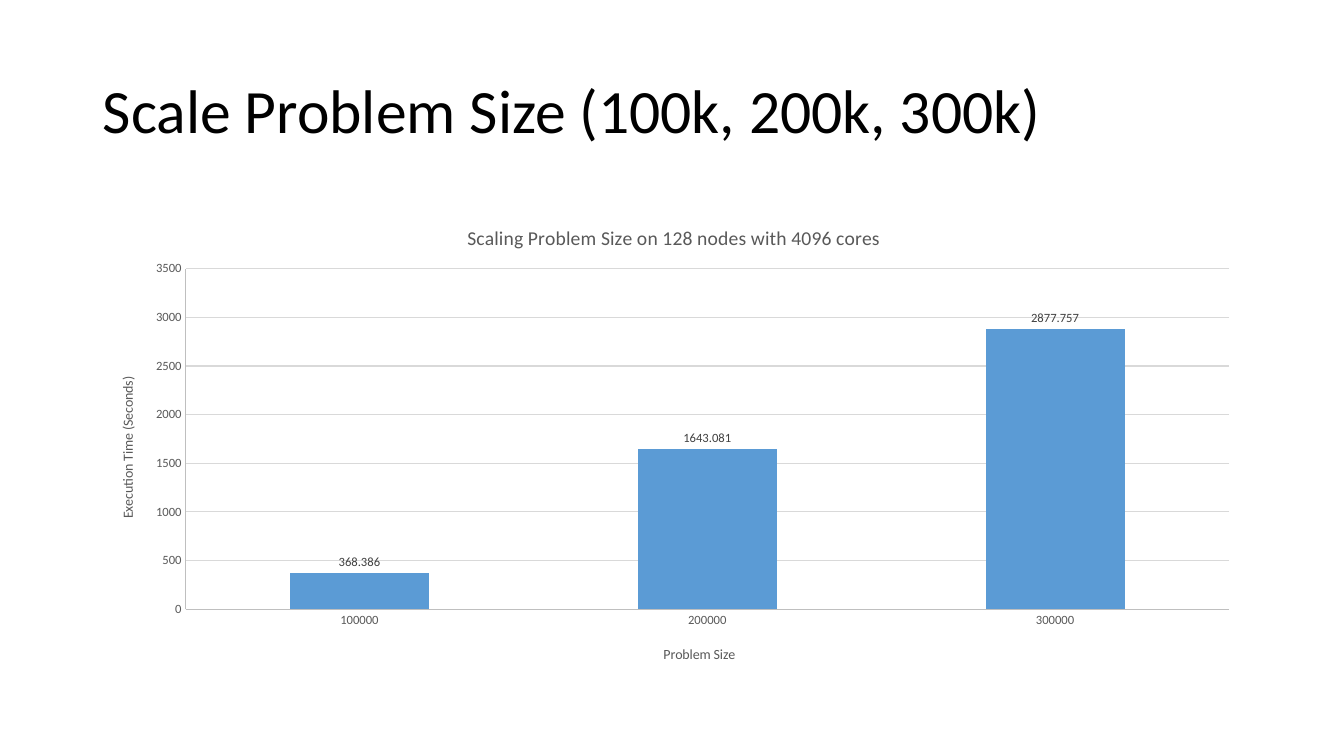
from lxml import etree
from pptx import Presentation
from pptx.chart.data import CategoryChartData
from pptx.dml.color import RGBColor
from pptx.enum import chart as ch, text as tx
from pptx.oxml.ns import qn
from pptx.util import Inches, Pt

FONT = "Calibri"
BLACK = RGBColor(0x00, 0x00, 0x00)
GREY = RGBColor(0x59, 0x59, 0x59)
DARK = RGBColor(0x40, 0x40, 0x40)
EDGE = RGBColor(0xBF, 0xBF, 0xBF)
GRID = RGBColor(0xD9, 0xD9, 0xD9)
BLUE = RGBColor(0x5B, 0x9B, 0xD5)


def style(font, size, color):
    font.name = FONT
    font.size = Pt(size)
    font.bold = False
    font.color.rgb = color


def stroke(line, color):
    line.color.rgb = color
    line.width = Pt(0.75)


def place(node, index, **parts):
    """Give a chart part a manual layout, in fractions of the chart."""
    for old in node.findall(qn("c:layout")):
        node.remove(old)
    layout = etree.Element(qn("c:layout"))
    node.insert(index, layout)
    manual = etree.SubElement(layout, qn("c:manualLayout"))
    if "w" in parts:
        etree.SubElement(manual, qn("c:layoutTarget")).set("val", "inner")
    for key in ("xMode", "yMode"):
        etree.SubElement(manual, qn("c:" + key)).set("val", "edge")
    for key, val in parts.items():
        etree.SubElement(manual, qn("c:" + key)).set("val", str(val))


def label(title, words, size, x, y):
    para = title.text_frame.paragraphs[0]
    run = para.add_run()
    run.text = words
    style(run.font, size, GREY)
    place(title._element, 1, x=x, y=y)


def set_axis(axis, words, x, y):
    axis.major_tick_mark = axis.minor_tick_mark = ch.XL_TICK_MARK.NONE
    style(axis.tick_labels.font, 9, GREY)
    stroke(axis.format.line, EDGE)
    label(axis.axis_title, words, 10, x, y)


def add_title(slide, words):
    title = slide.shapes.title
    title.left, title.top = Inches(0.92), Inches(0.4)
    title.width, title.height = Inches(11.5), Inches(1.45)
    frame = title.text_frame
    frame.word_wrap = True
    frame.vertical_anchor = tx.MSO_ANCHOR.MIDDLE
    para = frame.paragraphs[0]
    para.alignment = tx.PP_ALIGN.LEFT
    para.line_spacing = 0.9
    run = para.add_run()
    run.text = words
    style(run.font, 44, BLACK)


def add_bars(slide, sizes, times):
    data = CategoryChartData()
    data.categories = sizes
    data.add_series("Series 1", times)
    chart = slide.shapes.add_chart(
        ch.XL_CHART_TYPE.COLUMN_CLUSTERED, Inches(0.92), Inches(2),
        Inches(11.5), Inches(4.76), data).chart
    style(chart.font, 10, BLACK)
    chart.has_legend = False
    label(chart.chart_title, "Scaling Problem Size on 128 nodes with 4096 cores",
          14, 0.32, 0.04)
    set_axis(chart.category_axis, "Problem Size", 0.49, 0.92)
    axis = chart.value_axis
    set_axis(axis, "Execution Time (Seconds)", 0.02, 0.36)
    axis.minimum_scale, axis.maximum_scale, axis.major_unit = 0, 3500, 500
    stroke(axis.major_gridlines.format.line, GRID)

    plot = chart.plots[0]
    plot.gap_width = 150
    plot.vary_by_categories = False
    bars = plot.series[0]
    bars.format.fill.solid()
    bars.format.fill.fore_color.rgb = BLUE
    tags = bars.data_labels
    tags.show_value = True
    tags.position = ch.XL_LABEL_POSITION.OUTSIDE_END
    style(tags.font, 9, DARK)
    area = chart._chartSpace.find(".//" + qn("c:plotArea"))
    place(area, 0, x=0.08, y=0.14, w=0.9, h=0.71)


def main():
    deck = Presentation()
    deck.slide_width, deck.slide_height = Inches(13.33), Inches(7.5)
    slide = deck.slides.add_slide(deck.slide_layouts[5])
    add_title(slide, "Scale Problem Size (100k, 200k, 300k)")
    add_bars(slide, ["100000", "200000", "300000"],
             [368.386, 1643.081, 2877.757])
    deck.save("out.pptx")


if __name__ == "__main__":
    main()
